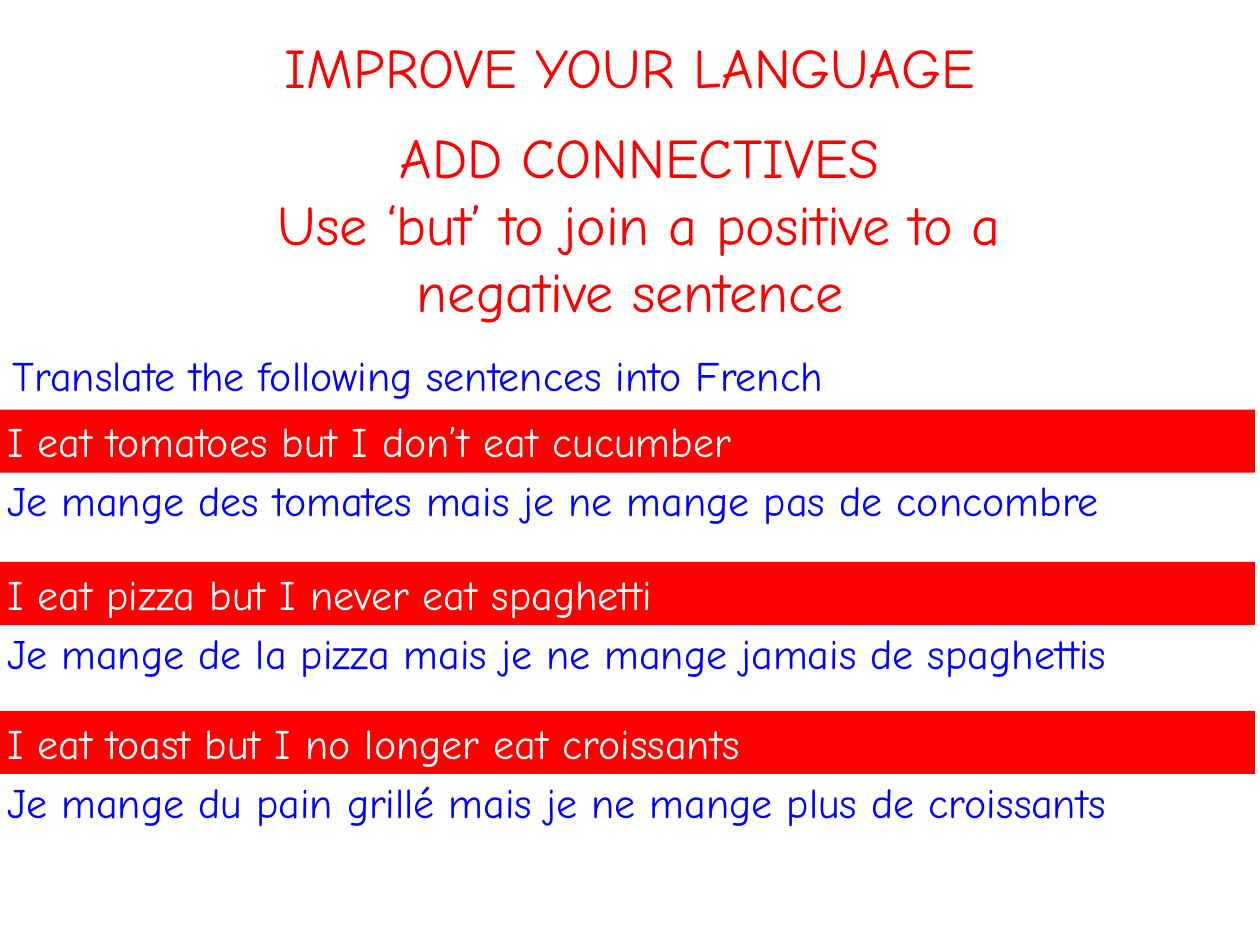
import pptx
import pptx.dml.color
import pptx.enum.shapes
import pptx.enum.text
import pptx.util

Cm = pptx.util.Cm
ALIGN = pptx.enum.text.PP_ALIGN

FONT = "Comic Neue"
COLOURS = {"red": "FF0000", "blue": "0000FF", "white": "FFFFFF"}

TITLE = ["IMPROVE YOUR LANGUAGE "]
SUBTITLE = [
    "ADD CONNECTIVES",
    "Use ‘but’ to join a positive to a negative sentence ",
]
INSTRUCTION = ["Translate the following sentences into French"]
# Top of each pair in cm, English sentence, French translation
SENTENCES = [
    (8.26, "I eat tomatoes but I don’t eat cucumber",
     "Je mange des tomates mais je ne mange pas de concombre"),
    (11.33, "I eat pizza but I never eat spaghetti",
     "Je mange de la pizza mais je ne mange jamais de spaghettis"),
    (14.33, "I eat toast but I no longer eat croissants",
     "Je mange du pain grillé mais je ne mange plus de croissants"),
]

PAGE_WIDTH, PAGE_HEIGHT = 25.4, 19.05
HEADING_LEFT, HEADING_WIDTH = 4.5, 16.79
LINE_HEIGHT = 1.27
PAIR_LEFT = -0.1
ANSWER_OFFSET = 1.19


def colour(name):
    return pptx.dml.color.RGBColor.from_string(COLOURS[name])


def add_text(page, lines, place, size, ink, align=ALIGN.LEFT, band=None):
    """Place lines of text at (left, top, width, height) in cm, on a band if one is named."""
    place = [Cm(length) for length in place]
    if band:
        box = page.shapes.add_shape(pptx.enum.shapes.MSO_SHAPE.RECTANGLE, *place)
        box.shadow.inherit = False
        box.fill.solid()
        box.fill.fore_color.rgb = colour(band)
        box.line.fill.background()
    else:
        box = page.shapes.add_textbox(*place)
    frame = box.text_frame
    frame.word_wrap = True
    frame.auto_size = pptx.enum.text.MSO_AUTO_SIZE.SHAPE_TO_FIT_TEXT
    frame.vertical_anchor = pptx.enum.text.MSO_ANCHOR.TOP
    for index, line in enumerate(lines):
        para = frame.add_paragraph() if index else frame.paragraphs[0]
        para.alignment = align
        span = para.add_run()
        span.text = line
        span.font.name = FONT
        span.font.size = pptx.util.Pt(size)
        span.font.color.rgb = colour(ink)


def main():
    deck = pptx.Presentation()
    deck.slide_width, deck.slide_height = Cm(PAGE_WIDTH), Cm(PAGE_HEIGHT)
    page = deck.slides.add_slide(deck.slide_layouts[6])

    for lines, top, height in [(TITLE, 0.53, 1.63), (SUBTITLE, 2.34, 4.37)]:
        add_text(page, lines, (HEADING_LEFT, top, HEADING_WIDTH, height),
                 32, "red", ALIGN.CENTER)

    add_text(page, INSTRUCTION, (0, 6.93, PAGE_WIDTH, LINE_HEIGHT), 24, "blue")

    for top, english, french in SENTENCES:
        add_text(page, [english], (PAIR_LEFT, top, PAGE_WIDTH, LINE_HEIGHT),
                 24, "white", band="red")
        add_text(page, [french],
                 (PAIR_LEFT, top + ANSWER_OFFSET, PAGE_WIDTH, LINE_HEIGHT), 24, "blue")

    deck.save("out.pptx")


if __name__ == "__main__":
    main()
